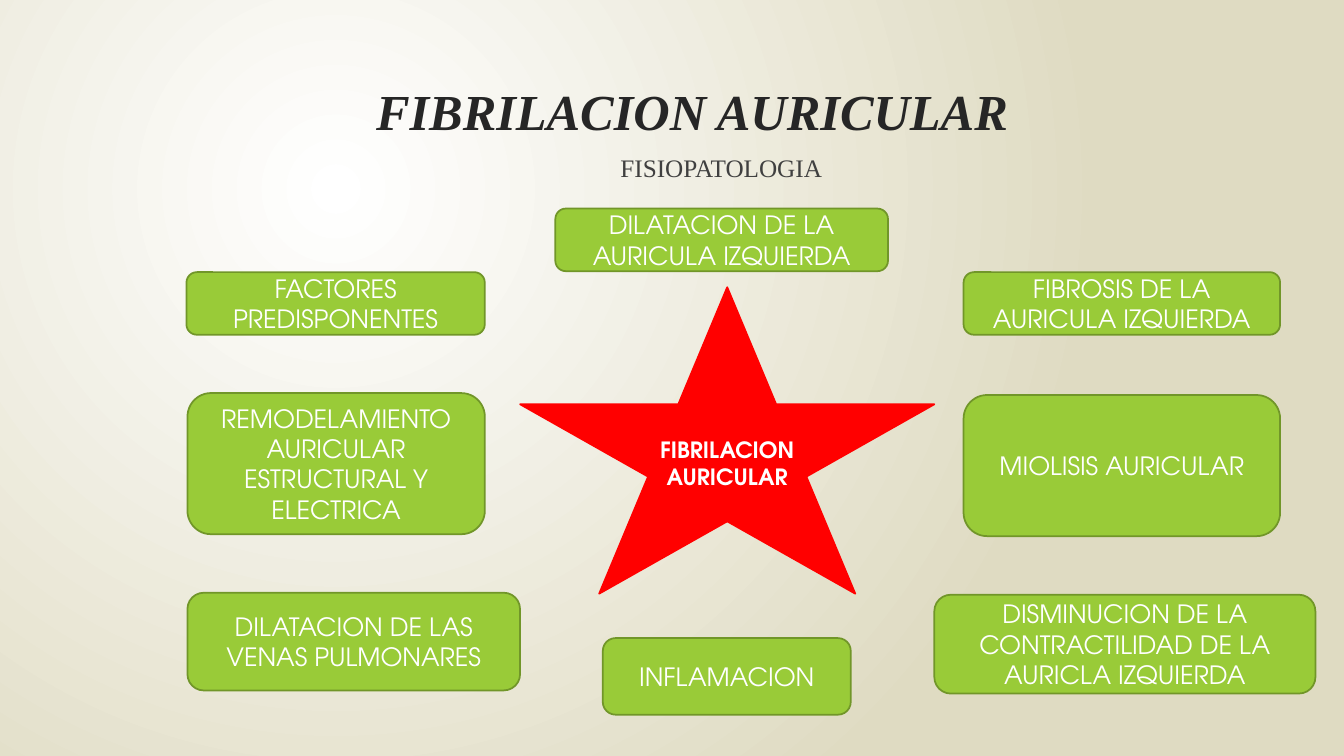
"""Build the slide on the pathophysiology of atrial fibrillation."""
from dataclasses import dataclass

from lxml.etree import SubElement
from pptx import Presentation
from pptx.dml.color import RGBColor
from pptx.enum.shapes import MSO_SHAPE
from pptx.enum.text import MSO_ANCHOR, PP_ALIGN
from pptx.oxml.ns import qn
from pptx.util import Pt

COLORS = {
    "white": "FFFFFF", "sand": "DFDBC2", "ink": "262626", "gray": "404040",
    "green": "99CB38", "moss": "719629", "red": "FF0000",
}
SERIF = "Times New Roman"
SANS = "TeX Gyre Adventor"


@dataclass
class Node:
    text: str
    left: float
    top: float
    width: float
    height: float
    kind: MSO_SHAPE = MSO_SHAPE.ROUNDED_RECTANGLE
    fill: str = "green"
    line: str = "moss"
    size: float = 18
    bold: bool = False


NODES = [
    Node("FACTORES PREDISPONENTES", 133.2, 194.4, 213.1, 44.7),
    Node("DILATACION DE LA AURICULA IZQUIERDA", 396.7, 149, 237.6, 44.7),
    Node("FIBROSIS DE LA AURICULA IZQUIERDA", 688.3, 194.4, 226.1, 44.7),
    Node("DILATACION DE LAS VENAS PULMONARES", 133.9, 423.4, 237.6, 69.8),
    Node("DISMINUCION DE LA CONTRACTILIDAD DE LA AURICLA IZQUIERDA",
         667.4, 424.8, 272.2, 70.6),
    Node("MIOLISIS AURICULAR", 688.3, 282.2, 226.1, 100.8),
    Node("REMODELAMIENTO AURICULAR ESTRUCTURAL Y ELECTRICA",
         133.9, 280.8, 212.4, 100.8),
    Node("FIBRILACION AURICULAR", 371.5, 205.2, 295.9, 218.9,
         MSO_SHAPE.STAR_5_POINT, "red", "red", 16, True),
    Node("INFLAMACION", 430.6, 455.8, 177.1, 54.7),
]


def tint(name: str) -> RGBColor:
    return RGBColor.from_string(COLORS[name])


def write(shape, text: str, *, font: str = SANS, size: float = 18,
          color: str = "white", bold: bool = False, italic: bool = False,
          anchor: MSO_ANCHOR = MSO_ANCHOR.MIDDLE,
          left: float = 7.2, top: float = 3.6) -> None:
    frame = shape.text_frame
    frame.word_wrap = True
    frame.vertical_anchor = anchor
    frame.margin_left, frame.margin_top = Pt(left), Pt(top)
    para = frame.paragraphs[0]
    para.alignment = PP_ALIGN.CENTER
    run = para.add_run()
    run.text = text
    face = run.font
    face.name, face.size = font, Pt(size)
    face.bold, face.italic = bold, italic
    face.color.rgb = tint(color)


def paint(slide) -> None:
    fill = slide.background.fill
    fill.gradient()
    for stop, name, place in zip(fill.gradient_stops, ("white", "sand"), (0, 1)):
        stop.color.rgb = tint(name)
        stop.position = place
    grad = slide.element.find(".//" + qn("a:gradFill"))
    grad.remove(grad.find(qn("a:lin")))
    glow = SubElement(grad, qn("a:path"), path="circle")
    SubElement(glow, qn("a:fillToRect"),
               l="50000", t="50000", r="100000", b="100000")


def draw(slide, node: Node) -> None:
    shape = slide.shapes.add_shape(node.kind, Pt(node.left), Pt(node.top),
                                   Pt(node.width), Pt(node.height))
    shape.shadow.inherit = False
    shape.fill.solid()
    shape.fill.fore_color.rgb = tint(node.fill)
    shape.line.color.rgb = tint(node.line)
    shape.line.width = Pt(1.25)
    write(shape, node.text, size=node.size, bold=node.bold)


def main() -> None:
    deck = Presentation()
    deck.slide_width, deck.slide_height = Pt(960), Pt(540)
    slide = deck.slides.add_slide(deck.slide_layouts[6])
    paint(slide)
    title = slide.shapes.add_textbox(Pt(38), Pt(49), Pt(868), Pt(101))
    write(title, "FIBRILACION AURICULAR", font=SERIF, size=36, color="ink",
          bold=True, italic=True, anchor=MSO_ANCHOR.TOP, left=52, top=8)
    body = slide.shapes.add_textbox(Pt(124.6), Pt(103.7), Pt(781.2), Pt(361.4))
    write(body, "FISIOPATOLOGIA", font=SERIF, color="gray",
          anchor=MSO_ANCHOR.TOP, top=5)
    for node in NODES:
        draw(slide, node)
    deck.save("out.pptx")


if __name__ == "__main__":
    main()
